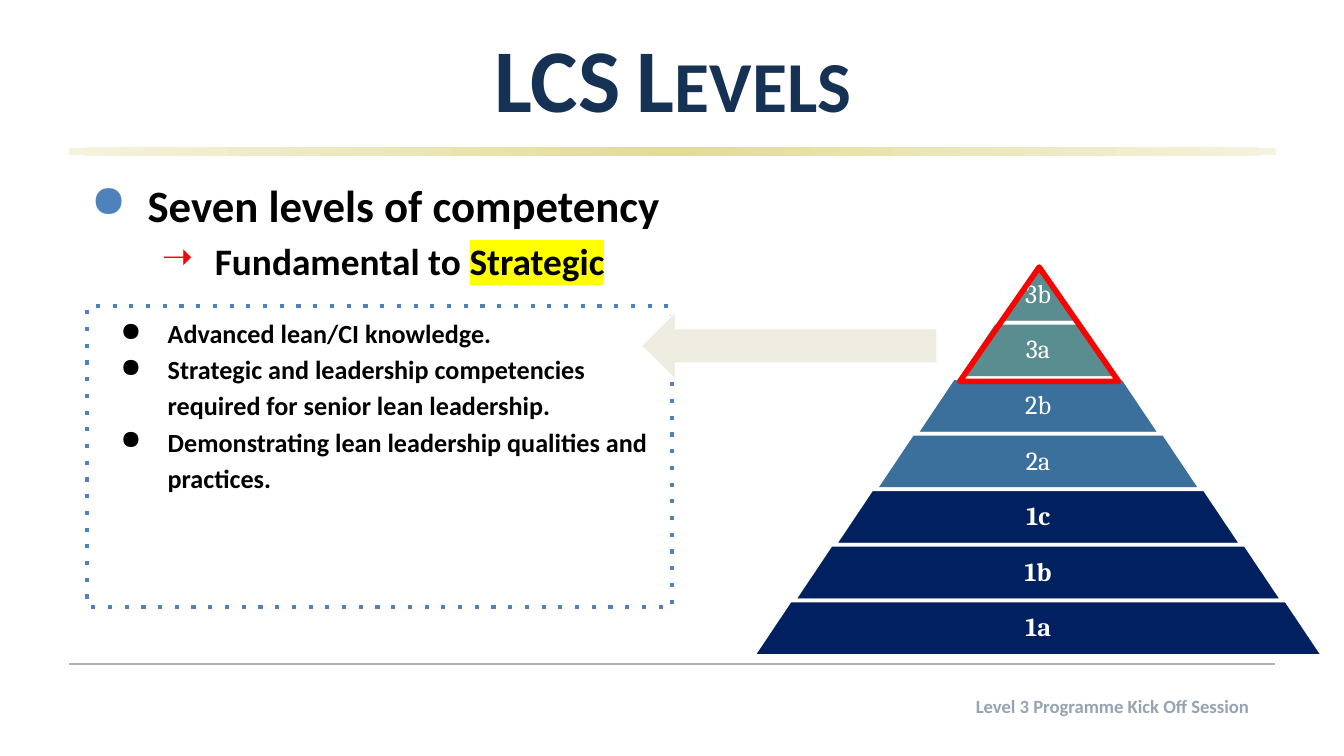
from dataclasses import dataclass
from typing import Optional

from lxml import etree
from pptx import Presentation
from pptx.dml.color import RGBColor
from pptx.enum.dml import MSO_LINE as Dash
from pptx.enum.shapes import MSO_CONNECTOR as Connector, MSO_SHAPE as Preset
from pptx.enum.text import MSO_ANCHOR as Anchor, MSO_AUTO_SIZE as AutoSize, PP_ALIGN as Align
from pptx.oxml import parse_xml
from pptx.oxml.ns import nsdecls, qn
from pptx.util import Cm, Pt

WHITE, BLACK, RED, BLUE = "FFFFFF", "000000", "FF0000", "4F81BD"
TEAL, STEEL, NAVY = "5A8D90", "3B709C", "002060"


@dataclass
class Span:
    text: str
    highlight: Optional[str] = None


@dataclass
class Bullet:
    spans: list[Span]
    size: float
    left: float
    hanging: float
    char: str
    colour: str


@dataclass
class Level:
    name: str
    fill: str
    bold: bool = False


INTRO = [
    Bullet([Span("Seven levels of competency")], 24, 1.27, 1.07, "●", BLUE),
    Bullet([Span("Fundamental to "), Span("Strategic", "FFFF00")], 20, 2.54, 1, "➝", RED),
]
SKILLS = [
    Bullet([Span(text)], 14, 1.27, 0.89, "●", BLACK)
    for text in (
        "Advanced lean/CI knowledge.",
        "Strategic and leadership competencies required for senior lean leadership.",
        "Demonstrating lean leadership qualities and practices.",
    )
]
LEVELS = [
    Level("3b", TEAL), Level("3a", TEAL), Level("2b", STEEL), Level("2a", STEEL),
    Level("1c", NAVY, True), Level("1b", NAVY, True), Level("1a", NAVY, True),
]
PYRAMID_CENTRE, PYRAMID_TOP, LEVEL_HEIGHT, LEVEL_GROWTH = 19.62, 5.05, 1.05, 1.54


def rgb(colour: str) -> RGBColor:
    return RGBColor.from_string(colour)


def add_span(para, text: str, size: float, colour: str, bold=True, name="Calibri"):
    span = para.add_run()
    span.text = text
    for key, value in {"size": Pt(size), "bold": bold, "name": name}.items():
        setattr(span.font, key, value)
    span.font.color.rgb = rgb(colour)
    return span


def set_frame(frame, anchor=Anchor.TOP, side: float = 0.25, edge: float = 0.13) -> None:
    values = {
        "word_wrap": True, "auto_size": AutoSize.NONE, "vertical_anchor": anchor,
        "margin_left": Cm(side), "margin_right": Cm(side),
        "margin_top": Cm(edge), "margin_bottom": Cm(edge),
    }
    for key, value in values.items():
        setattr(frame, key, value)


def add_box(shapes, left: float, top: float, width: float, height: float):
    return shapes.add_textbox(Cm(left), Cm(top), Cm(width), Cm(height))


def add_preset(shapes, preset, left: float, top: float, width: float, height: float,
               fill: Optional[str] = None, line: Optional[str] = None, weight: float = 1):
    shape = shapes.add_shape(preset, Cm(left), Cm(top), Cm(width), Cm(height))
    shape.shadow.inherit = False
    if fill:
        shape.fill.solid()
        shape.fill.fore_color.rgb = rgb(fill)
    else:
        shape.fill.background()
    if line:
        shape.line.color.rgb = rgb(line)
        shape.line.width = Pt(weight)
    else:
        shape.line.fill.background()
    return shape


def add_bullets(frame, bullets: list[Bullet]) -> None:
    for index, bullet in enumerate(bullets):
        para = frame.add_paragraph() if index else frame.paragraphs[0]
        para.alignment = Align.LEFT
        para.line_spacing = 1.15
        para.space_before = Pt(0)
        settings = para._p.get_or_add_pPr()
        settings.set("marL", str(Cm(bullet.left)))
        settings.set("indent", str(-Cm(bullet.hanging)))
        tint = etree.SubElement(settings, qn("a:buClr"))
        etree.SubElement(tint, qn("a:srgbClr"), val=bullet.colour)
        etree.SubElement(settings, qn("a:buChar"), char=bullet.char)
        for part in bullet.spans:
            span = add_span(para, part.text, bullet.size, BLACK)
            if part.highlight:
                mark = etree.Element(qn("a:highlight"))
                etree.SubElement(mark, qn("a:srgbClr"), val=part.highlight)
                span._r.rPr.find(qn("a:solidFill")).addnext(mark)


def add_title(page) -> None:
    title = page.shapes.title
    title.left, title.top, title.width, title.height = Cm(1.3), Cm(0.25), Cm(22.83), Cm(2.39)
    set_frame(title.text_frame, Anchor.MIDDLE)
    para = title.text_frame.paragraphs[0]
    para.alignment = Align.CENTER
    span = add_span(para, "LCS Levels", 48, "153154")
    span._r.rPr.set("cap", "small")


def add_gold_bar(page) -> None:
    bar = add_preset(page.shapes, Preset.RECTANGLE, 1.3, 2.79, 22.81, 0.15)
    stops = "".join(
        f'<a:gs pos="{pos}"><a:srgbClr val="{colour}"/></a:gs>'
        for pos, colour in ((0, "E2DD90"), (50000, "ECE7BC"), (100000, "F5F2DE"))
    )
    gradient = parse_xml(
        f'<a:gradFill {nsdecls("a")} rotWithShape="1"><a:gsLst>{stops}</a:gsLst>'
        '<a:path path="circle"><a:fillToRect l="50000" t="50000" r="50000" b="50000"/></a:path>'
        "</a:gradFill>"
    )
    properties = bar._element.spPr
    properties.replace(properties.find(qn("a:noFill")), gradient)


def add_footer(page) -> None:
    rule = page.shapes.add_connector(Connector.STRAIGHT, Cm(1.3), Cm(12.55), Cm(24.1), Cm(12.55))
    rule.line.color.rgb = rgb("B2B2B2")
    rule.line.width = Pt(1.5)
    etree.SubElement(rule._element.spPr, qn("a:effectLst"))
    box = add_box(page.shapes, 14.3, 13, 9.55, 0.74)
    set_frame(box.text_frame)
    para = box.text_frame.paragraphs[0]
    para.alignment = Align.RIGHT
    add_span(para, "Level 3 Programme Kick Off Session", 10, "95A3B2")


def add_pyramid(page) -> None:
    shapes = page.shapes.add_group_shape().shapes
    for index, level in enumerate(LEVELS):
        width = LEVEL_GROWTH * (index + 1)
        top = PYRAMID_TOP + LEVEL_HEIGHT * index
        tier = add_preset(shapes, Preset.TRAPEZOID, PYRAMID_CENTRE - width / 2, top,
                          width, LEVEL_HEIGHT, level.fill, WHITE, 2)
        tier.adjustments[0] = 0.67
        label_width = max(0.65 * width, LEVEL_GROWTH)
        label = add_box(shapes, PYRAMID_CENTRE - label_width / 2, top, label_width, LEVEL_HEIGHT)
        set_frame(label.text_frame, Anchor.MIDDLE, 0.05, 0.05)
        para = label.text_frame.paragraphs[0]
        para.alignment = Align.CENTER
        para.line_spacing = 0.9
        add_span(para, level.name, 14, WHITE, level.bold, "Cambria")


def add_skills(page) -> None:
    panel = add_preset(page.shapes, Preset.RECTANGLE, 1.65, 5.79, 11.05, 5.69, WHITE, BLUE, 2.25)
    panel.line.dash_style = Dash.ROUND_DOT
    panel._element.spPr.find(".//" + qn("a:prstDash")).set("val", "dot")
    set_frame(panel.text_frame)
    add_bullets(panel.text_frame, SKILLS)


def main() -> None:
    deck = Presentation()
    deck.slide_width, deck.slide_height = Cm(25.4), Cm(14.29)
    page = deck.slides.add_slide(deck.slide_layouts[5])
    add_gold_bar(page)
    add_footer(page)
    add_title(page)
    intro = add_box(page.shapes, 1.27, 3.07, 22.86, 9.47)
    set_frame(intro.text_frame)
    add_bullets(intro.text_frame, INTRO)
    add_pyramid(page)
    add_skills(page)
    add_preset(page.shapes, Preset.ISOSCELES_TRIANGLE, 18.14, 5.05, 3, 2.16, line=RED, weight=3)
    add_preset(page.shapes, Preset.LEFT_ARROW, 12.12, 5.89, 5.59, 1.3, "EEECE1", WHITE, 0.75)
    deck.save("out.pptx")


if __name__ == "__main__":
    main()
